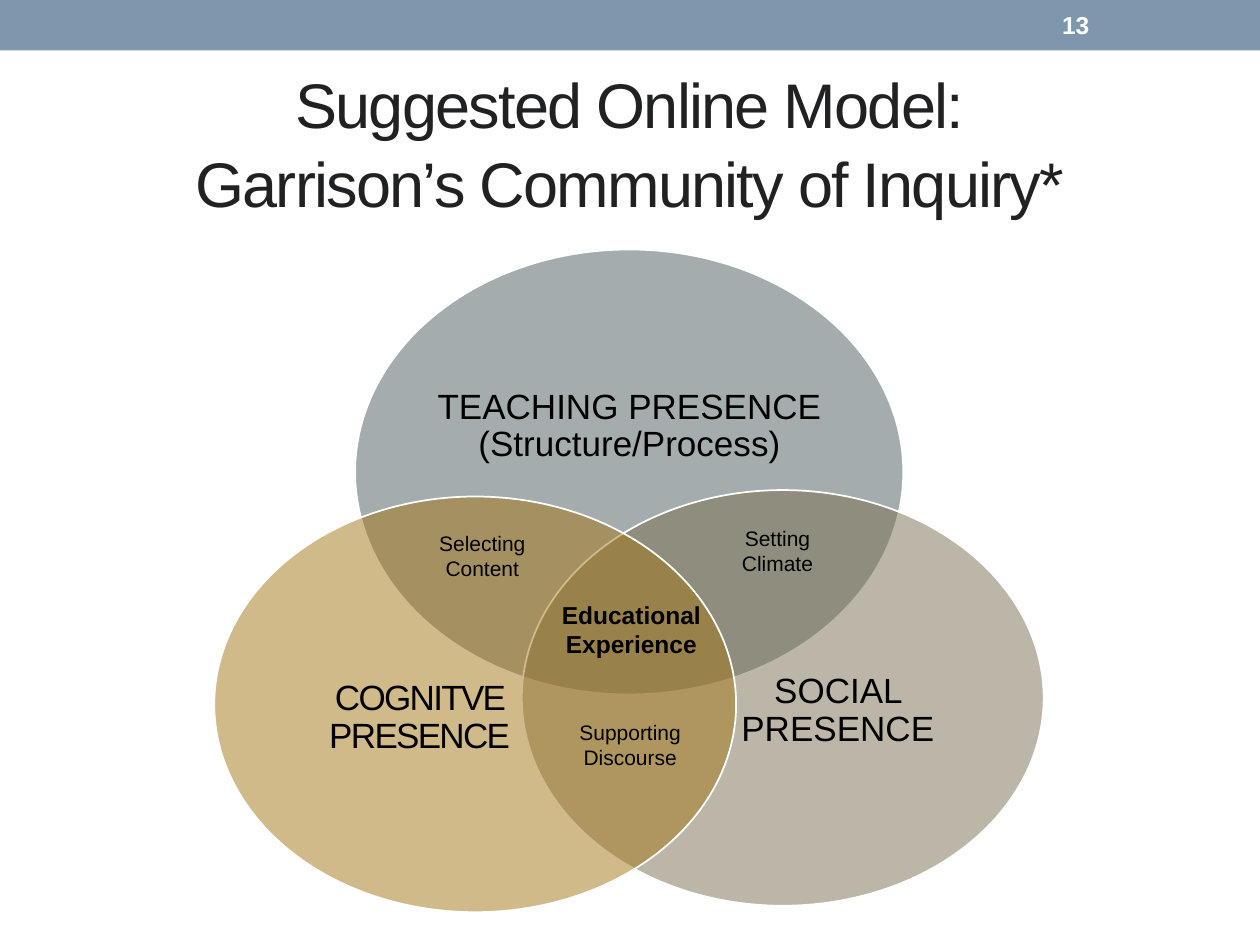
from lxml.etree import SubElement
from pptx import Presentation
from pptx.dml.color import RGBColor
from pptx.enum.shapes import MSO_SHAPE
from pptx.enum.text import MSO_ANCHOR, MSO_AUTO_SIZE, PP_ALIGN
from pptx.oxml.ns import qn
from pptx.util import Cm, Pt

# Presence circles: text, colour, circle box, text box, letter spacing (lengths in cm)
PRESENCES = [
    ("TEACHING PRESENCE (Structure/Process)", "4D5A5C",
     (7.16, 5.03, 11.05, 8.97), (8.64, 6.58, 8.1, 4.04), 0),
    ("SOCIAL PRESENCE", "786F51",
     (10.52, 9.88, 10.52, 8.38), (13.74, 12.04, 6.3, 4.6), 0),
    ("COGNITVE PRESENCE", "A57617",
     (4.32, 10.01, 10.52, 8.38), (5.31, 12.17, 6.3, 4.6), -1),
]
# Overlaps: text, box, size, bold
OVERLAPS = [
    ("Supporting Discourse", (10.8, 14.27, 3.81, 1.47), 12, False),
    ("Educational Experience", (10.29, 11.53, 4.88, 2.31), 14, True),
    ("Setting Climate", (13.77, 10.36, 3.81, 1.47), 12, False),
    ("Selecting Content", (7.82, 10.46, 3.81, 1.47), 12, False),
]


def color(hex_string):
    return RGBColor.from_string(hex_string)


def lengths(box):
    return [Cm(value) for value in box]


class SlideBuilder:
    font_name = "Arial"
    white = "FFFFFF"
    black = "000000"
    title_color = "1F2123"
    bar_color = "7E97AD"

    def __init__(self, slide):
        self.slide = slide
        self.diagram = None

    def start_diagram(self):
        self.diagram = self.slide.shapes.add_group_shape()

    def set_text(self, shape, text, size, hex_string, bold=False,
                 align=PP_ALIGN.CENTER, line_spacing=None, spacing=0):
        """Fill a shape with one formatted paragraph; spacing is in points."""
        frame = shape.text_frame
        frame.text = text
        frame.word_wrap = True
        frame.auto_size = MSO_AUTO_SIZE.NONE
        frame.vertical_anchor = MSO_ANCHOR.MIDDLE
        paragraph = frame.paragraphs[0]
        paragraph.alignment = align
        paragraph.line_spacing = line_spacing
        for run in paragraph.runs:
            run.font.name = self.font_name
            run.font.size = Pt(size)
            run.font.bold = bold
            run.font.color.rgb = color(hex_string)
            if spacing:
                run._r.get_or_add_rPr().set("spc", str(spacing * 100))

    def bar(self, box):
        shape = self.slide.shapes.add_shape(MSO_SHAPE.RECTANGLE, *lengths(box))
        shape.shadow.inherit = False
        shape.fill.solid()
        shape.fill.fore_color.rgb = color(self.bar_color)
        shape.line.fill.background()

    def title(self, text, box):
        title = self.slide.shapes.title
        title.left, title.top, title.width, title.height = lengths(box)
        self.set_text(title, text, 36, self.title_color, line_spacing=1.05, spacing=-1)

    def page_number(self, text, box):
        shape = self.slide.shapes.add_textbox(*lengths(box))
        self.set_text(shape, text, 14, self.white, bold=True, align=PP_ALIGN.LEFT)

    def circle(self, hex_string, box):
        """Add a half-transparent ellipse to the diagram."""
        shape = self.diagram.shapes.add_shape(MSO_SHAPE.OVAL, *lengths(box))
        shape.shadow.inherit = False
        shape.fill.solid()
        shape.fill.fore_color.rgb = color(hex_string)
        fill_color = shape.element.spPr.find(".//" + qn("a:srgbClr"))
        SubElement(fill_color, qn("a:alpha"), val="50000")
        shape.line.color.rgb = color(self.white)
        shape.line.width = Pt(1)

    def circle_text(self, text, box, spacing):
        shape = self.diagram.shapes.add_textbox(*lengths(box))
        frame = shape.text_frame
        frame.margin_left = frame.margin_right = 0
        frame.margin_top = frame.margin_bottom = 0
        self.set_text(shape, text, 20, self.black, line_spacing=0.9, spacing=spacing)

    def overlap_label(self, text, box, size, bold):
        shape = self.diagram.shapes.add_shape(MSO_SHAPE.OVAL, *lengths(box))
        shape.shadow.inherit = False
        shape.fill.background()
        shape.line.fill.background()
        self.set_text(shape, text, size, self.black, bold=bold)


def main():
    presentation = Presentation()
    presentation.slide_width = Cm(25.4)
    presentation.slide_height = Cm(19.05)
    title_only = presentation.slide_layouts[5]
    builder = SlideBuilder(presentation.slides.add_slide(title_only))

    builder.bar((0, 0, 25.4, 1.02))
    builder.title("Suggested Online Model:\vGarrison’s Community of Inquiry*",
                  (1.27, 1.47, 22.86, 2.74))
    builder.page_number("13", (21.16, 0.05, 2.97, 0.91))

    builder.start_diagram()
    for text, hex_string, circle_box, text_box, spacing in PRESENCES:
        builder.circle(hex_string, circle_box)
        builder.circle_text(text, text_box, spacing)
    for overlap in OVERLAPS:
        builder.overlap_label(*overlap)

    presentation.save("out.pptx")


if __name__ == "__main__":
    main()
